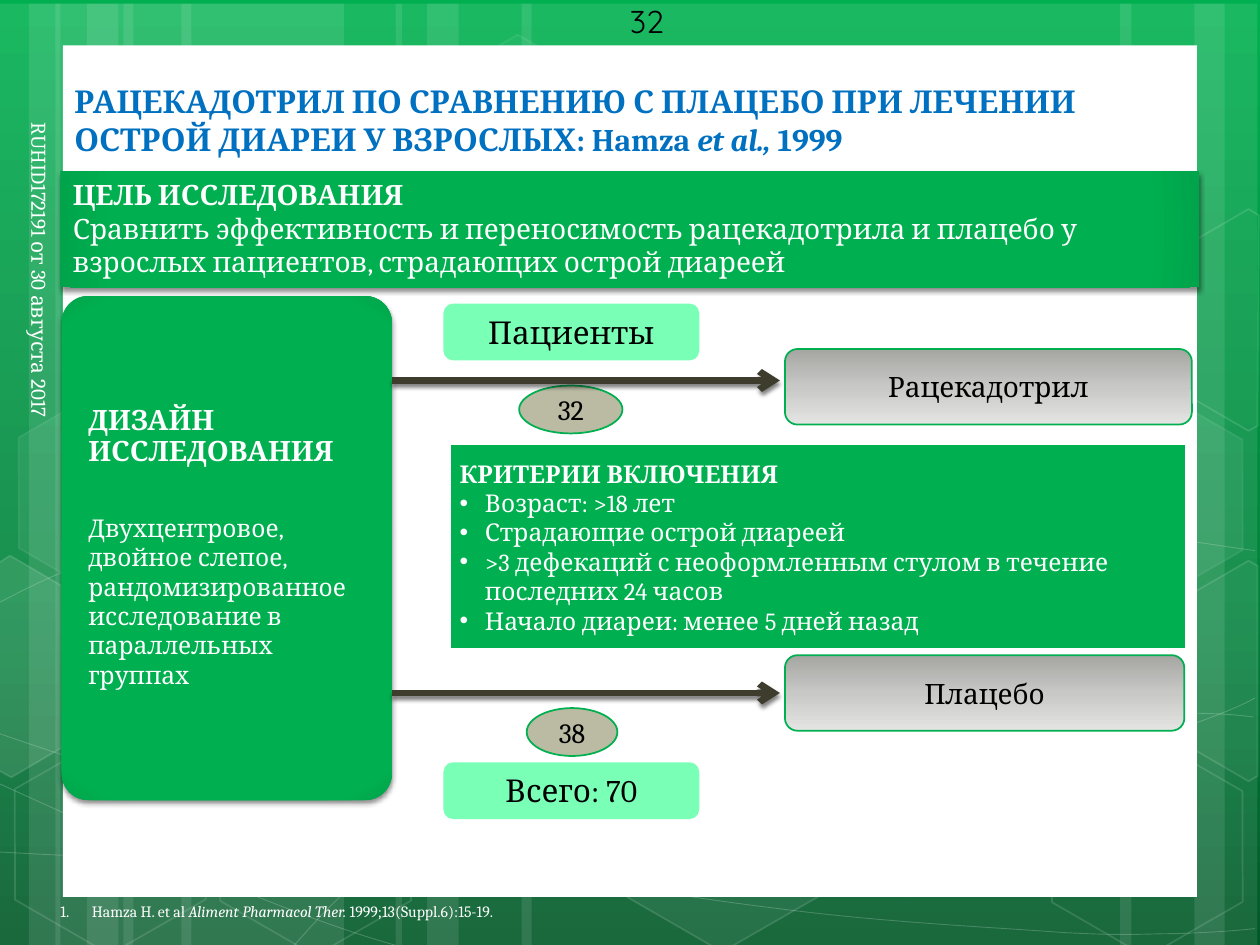
from pptx import Presentation
from pptx import oxml, util as u
from pptx.dml.color import RGBColor
from pptx.enum import shapes, text
from pptx.oxml.ns import nsdecls, qn

GREEN, MINT, WHITE, BLACK = "00B050", "79FFB6", "FFFFFF", "000000"
BANNER_STOPS = [(0, GREEN), (90, GREEN), (100, "00A44B")]
GREY_STOPS = [(0, "A5A5A1"), (50, "C8C8C6"), (100, "E4E4E3")]
PAGE_STOPS = [(0, GREEN), (62, "00843C"), (100, "005828")]
RECTANGLE = shapes.MSO_SHAPE.RECTANGLE
ROUNDED = shapes.MSO_SHAPE.ROUNDED_RECTANGLE
CENTER = text.PP_ALIGN.CENTER
TOP, MIDDLE, BOTTOM = text.MSO_ANCHOR.TOP, text.MSO_ANCHOR.MIDDLE, text.MSO_ANCHOR.BOTTOM

# Left edge and width of the pale background stripes, in inches
STRIPES = [(0.98, 1.75), (-0.02, 0.5), (0.23, 0.83), (1.44, 1.75), (0.44, 0.5), (0.69, 0.83),
           (7.23, 1.75), (9.48, 0.5), (8.89, 0.83), (4.14, 3.09), (3.14, 0.5), (3.39, 0.83)]
# Left, top, fill opacity, line opacity
HEXAGONS = [(3.23, 0.39, 4, 8), (4.86, 5.92, 6, 12), (0, 5.94, 0, 12), (0.03, 3.15, 7, 8),
            (1.63, 5.95, 0, 12), (8.23, 5.96, 0, 12), (8.23, 3.17, 7, 8)]
# Corners of the hexagons cut by the slide edge, fill opacity
CUT_HEXAGONS = [
    ([(-0.03, 4.48), (0.08, 4.41), (0.85, 4.86), (0.84, 5.73), (0.09, 6.17), (-0.02, 6.11)], 10),
    ([(9.15, 4.89), (9.91, 4.45), (9.98, 4.49), (9.98, 6.16), (9.91, 6.2), (9.15, 5.76)], 4),
    ([(9.15, 2.1), (9.91, 1.66), (9.99, 1.71), (9.98, 3.38), (9.91, 3.42), (9.15, 2.98)], 0)]
# Bezier chains: a start point, then three points for each segment
CURVES = [
    [(-0.04, 6.76), (0.5, 6.79), (1.04, 6.82), (1.79, 6.81), (2.54, 6.8), (3.47, 6.78), (4.47, 6.68),
     (5.47, 6.58), (6.89, 6.39), (7.81, 6.2), (8.72, 6.01), (9.66, 5.71), (9.96, 5.54)],
    [(-0.04, 4.8), (0.25, 4.65), (0.54, 4.49), (1.11, 4.34), (1.67, 4.19), (2.48, 3.98), (3.36, 3.9),
     (4.25, 3.83), (5.33, 3.82), (6.43, 3.9), (7.53, 3.98), (9.36, 4.29), (9.96, 4.37)],
    [(-0.05, 6.2), (1.16, 6.75), (2.36, 7.3), (3.24, 7.53)],
    [(-0.04, 5.81), (0.28, 5.92), (0.59, 6.03), (1.17, 6.19), (1.75, 6.35), (2.62, 6.59), (3.46, 6.76),
     (4.29, 6.93), (5.34, 7.11), (6.17, 7.21), (7, 7.32), (7.89, 7.36), (8.42, 7.4),
     (8.95, 7.43), (9.08, 7.41), (9.34, 7.41), (9.6, 7.4), (9.78, 7.39), (9.96, 7.37)],
    [(2.31, 7.53), (2.49, 7.33), (2.67, 7.12), (2.91, 6.94), (3.15, 6.76), (3.49, 6.56), (3.77, 6.42),
     (4.05, 6.28), (4.22, 6.22), (4.59, 6.12), (4.95, 6.02), (5.62, 5.88), (5.98, 5.81),
     (6.33, 5.74), (6.38, 5.75), (6.69, 5.72), (7, 5.69), (7.49, 5.67), (7.83, 5.66),
     (8.18, 5.64), (8.75, 5.66), (8.75, 5.66), (8.97, 5.66), (9.2, 5.66), (9.42, 5.66),
     (9.6, 5.66), (9.77, 5.67), (9.86, 5.68), (9.95, 5.69), (9.92, 5.69), (9.95, 5.69)]]


def length(inches):
    return u.Cm(inches * 2.54)


def color(value):
    return RGBColor.from_string(value)


def element(xml):
    """Parse one drawing element, given without its namespace declaration."""
    tag, rest = xml.split(" ", 1)
    return oxml.parse_xml(f"{tag} {nsdecls('a')} {rest}")


def set_opacity(parent, percent):
    parent.find(".//" + qn("a:srgbClr")).append(element(f'<a:alpha val="{percent * 1000}"/>'))


def set_gradient(fill, parent, stops, circular=False):
    fill.solid()
    solid = parent.find(".//" + qn("a:solidFill"))
    marks = "".join(f'<a:gs pos="{at * 1000}"><a:srgbClr val="{value}"/></a:gs>' for at, value in stops)
    direction = '<a:lin ang="5400000" scaled="0"/>'
    if circular:
        direction = ('<a:path path="circle"><a:fillToRect l="100000" t="100000" '
                     'r="100000" b="100000"/></a:path>')
    solid.getparent().replace(solid, element(
        f'<a:gradFill rotWithShape="1"><a:gsLst>{marks}</a:gsLst>{direction}</a:gradFill>'))


def add_shadow(shape, opacity, blur):
    shape._element.spPr.append(element(
        f'<a:effectLst ><a:outerShdw blurRad="{u.Pt(blur)}" dist="{u.Pt(2)}" dir="5400000" rotWithShape="0">'
        f'<a:srgbClr val="{BLACK}"><a:alpha val="{opacity * 1000}"/></a:srgbClr></a:outerShdw></a:effectLst>'))


def style(shape, fill=None, line=None, width=1, fill_opacity=100, line_opacity=100, shadow=False):
    """Fill with a hex colour or a list of gradient stops, and outline."""
    properties = shape._element.spPr
    if isinstance(fill, list):
        set_gradient(shape.fill, properties, fill, circular=shadow)
    elif fill and fill_opacity:
        shape.fill.solid()
        shape.fill.fore_color.rgb = color(fill)
        if fill_opacity < 100:
            set_opacity(properties, fill_opacity)
    else:
        shape.fill.background()
    if line:
        shape.line.color.rgb = color(line)
        shape.line.width = u.Pt(width)
        if line_opacity < 100:
            set_opacity(properties.find(qn("a:ln")), line_opacity)
    else:
        shape.line.fill.background()
    if shadow:
        add_shadow(shape, 45, 3)
    else:
        shape.shadow.inherit = False


def add_box(slide, kind, box, fill, **look):
    shape = slide.shapes.add_shape(kind, *map(length, box))
    style(shape, fill, **look)
    return shape


def write(shape, paragraphs, size, ink=BLACK, align=text.PP_ALIGN.LEFT, anchor=TOP,
          inset=(0.1, 0.05), font="Cambria"):
    """Each paragraph is a list of (text, flags) runs; flags hold b for bold, i for italic."""
    frame = shape.text_frame
    frame.word_wrap = True
    frame.auto_size = text.MSO_AUTO_SIZE.NONE
    frame.vertical_anchor = anchor
    frame.margin_left = frame.margin_right = length(inset[0])
    frame.margin_top = frame.margin_bottom = length(inset[1])
    for index, runs in enumerate(paragraphs):
        paragraph = frame.add_paragraph() if index else frame.paragraphs[0]
        paragraph.alignment = align
        for words, flags in runs:
            run = paragraph.add_run()
            run.text = words
            run.font.name, run.font.size = font, u.Pt(size)
            run.font.bold, run.font.italic = "b" in flags, "i" in flags
            run.font.color.rgb = color(ink)
    return frame.paragraphs


def add_label(slide, box, paragraphs, size, **look):
    shape = slide.shapes.add_textbox(*map(length, box))
    return shape, write(shape, paragraphs, size, **look)


def set_hanging(paragraph, inches, bullet=None):
    properties = paragraph._p.get_or_add_pPr()
    properties.set("marL", str(length(inches)))
    properties.set("indent", str(-length(inches)))
    if bullet:
        properties.append(element('<a:buFont typeface="Arial"/>'))
        properties.append(element(f'<a:buChar char="{bullet}"/>'))


def add_outline(slide, points, close, **look):
    points = [(length(x), length(y)) for x, y in points]
    builder = slide.shapes.build_freeform(*points[0])
    builder.add_line_segments(points[1:], close=close)
    shape = builder.convert_to_shape()
    style(shape, line=WHITE, **look)
    return shape


def add_curve(slide, chain):
    """Draw the chain as an outline, then turn each three line steps into one Bezier step."""
    shape = add_outline(slide, chain, False, width=0.5, line_opacity=20)
    steps = list(shape._element.spPr.iter(qn("a:lnTo")))
    for start in range(0, len(steps), 3):
        bezier = element("<a:cubicBezTo />")
        steps[start].addprevious(bezier)
        for step in steps[start:start + 3]:
            bezier.append(step[0])
            step.getparent().remove(step)


def add_arrow(slide, y):
    arrow = slide.shapes.add_connector(shapes.MSO_CONNECTOR.STRAIGHT, *map(length, (3.11, y, 6.19, y)))
    arrow.line.color.rgb = color("3E3D2D")
    arrow.line.width = u.Pt(3.75)
    arrow._element.spPr.find(qn("a:ln")).append(element('<a:tailEnd type="arrow"/>'))
    add_shadow(arrow, 50, 2.5)


def add_backdrop(slide):
    set_gradient(slide.background.fill, slide._element, PAGE_STOPS)
    for left, width in STRIPES:
        add_box(slide, RECTANGLE, (left, 0.03, width, 7.5), WHITE, fill_opacity=10)
    for chain in CURVES:
        add_curve(slide, chain)
    for left, top, opacity, line_opacity in HEXAGONS:
        hexagon = add_box(slide, shapes.MSO_SHAPE.HEXAGON, (left, top, 1.75, 1.52), WHITE,
                          fill_opacity=opacity, line=WHITE, line_opacity=line_opacity)
        hexagon.rotation = 30
        hexagon.adjustments[0] = 0.29
    for corners, opacity in CUT_HEXAGONS:
        add_outline(slide, corners, True, fill=WHITE, fill_opacity=opacity, line_opacity=12)
    add_box(slide, RECTANGLE, (0.5, 0.36, 9, 6.76), WHITE)


def add_title(slide):
    title = slide.shapes.title
    title.left, title.top, title.width, title.height = map(length, (0.49, 0.29, 9.04, 1.01))
    write(title, [[("РАЦЕКАДОТРИЛ ПО СРАВНЕНИЮ С ПЛАЦЕБО ПРИ ЛЕЧЕНИИ ОСТРОЙ ДИАРЕИ У ВЗРОСЛЫХ: Hamza ", "b"),
                   ("et al., ", "bi"), ("1999", "b")]], 18, "0070C0", anchor=BOTTOM)
    slide.shapes._spTree.append(title._element)  # in front of the white panel


def add_design(slide):
    panel = add_box(slide, ROUNDED, (0.49, 2.35, 2.62, 4), BANNER_STOPS, shadow=True)
    panel.adjustments[0] = 0.08
    heading, body = write(panel, [[("ДИЗАЙН ИССЛЕДОВАНИЯ", "b")], [(
        "Двухцентровое, двойное слепое, рандомизированное исследование в параллельных группах", "")]],
        16, WHITE, anchor=MIDDLE, inset=(0.15, 0.18))
    heading.line_spacing = 0.9
    heading.space_after = u.Pt(26)
    body.runs[0].font.size = u.Pt(14)


def add_criteria(slide):
    panel = add_box(slide, RECTANGLE, (3.55, 3.51, 5.88, 1.66), GREEN, line=WHITE, width=3.75)
    criteria = ["Возраст: >18 лет", "Страдающие острой диареей",
                ">3 дефекаций с неоформленным стулом в течение последних 24 часов",
                "Начало диареи: менее 5 дней назад"]
    paragraphs = write(panel, [[("КРИТЕРИИ ВКЛЮЧЕНИЯ", "b")]] + [[(item, "")] for item in criteria],
                       14, WHITE, anchor=MIDDLE)
    for paragraph in paragraphs[1:]:
        set_hanging(paragraph, 0.2, "•")


def add_groups(slide):
    for name, top, width in (("Рацекадотрил", 2.77, 3.23), ("Плацебо", 5.2, 3.17)):
        group = add_box(slide, ROUNDED, (6.23, top, width, 0.6), GREY_STOPS, line=GREEN)
        write(group, [[(name, "")]], 16, align=CENTER, anchor=MIDDLE, inset=(0, 0))
    for words, top in (("Пациенты", 2.41), ("Всего: 70", 6.05)):
        tag = add_box(slide, ROUNDED, (3.52, top, 2.03, 0.45), MINT)
        write(tag, [[(words, "")]], 18, align=CENTER)
    for count, left, top, width in (("32", 4.12, 3.06, 0.82), ("38", 4.18, 5.62, 0.72)):
        oval = add_box(slide, shapes.MSO_SHAPE.OVAL, (left, top, width, 0.38), "BBBAA2", line=GREEN)
        write(oval, [[(count, "")]], 16, align=CENTER, anchor=MIDDLE, inset=(0, 0))
    for y in (3.02, 5.5):
        add_arrow(slide, y)


def main():
    presentation = Presentation()
    presentation.slide_width, presentation.slide_height = length(10), length(7.5)
    slide = presentation.slides.add_slide(presentation.slide_layouts[5])
    add_backdrop(slide)
    add_title(slide)
    _, (reference,) = add_label(slide, (0.48, 7.16, 4.7, 0.15), [[
        ("1.\tHamza H. et al ", ""), ("Aliment Pharmacol Ther. ", "i"), ("1999;13(Suppl.6):15-19.", "")]],
        9, ink=WHITE, anchor=BOTTOM, inset=(0, 0))
    set_hanging(reference, 0.25)
    add_design(slide)
    add_criteria(slide)
    goal = add_box(slide, RECTANGLE, (0.48, 1.36, 9.04, 0.92), BANNER_STOPS, shadow=True)
    write(goal, [[("ЦЕЛЬ ИССЛЕДОВАНИЯ", "b")], [(
        "Сравнить эффективность и переносимость рацекадотрила и плацебо у взрослых пациентов, "
        "страдающих острой диареей", "")]], 16, WHITE)
    add_groups(slide)
    add_label(slide, (4.9, -0.03, 1.46, 0.4), [[("32", "")]], 18, font="Quicksand")
    side_note, _ = add_label(slide, (-2.16, 3.2, 4.95, 0.3), [[("RUHID172191 от 30 августа 2017", "")]],
                             12, ink=WHITE)
    side_note.rotation = 90
    presentation.save("out.pptx")


if __name__ == "__main__":
    main()
